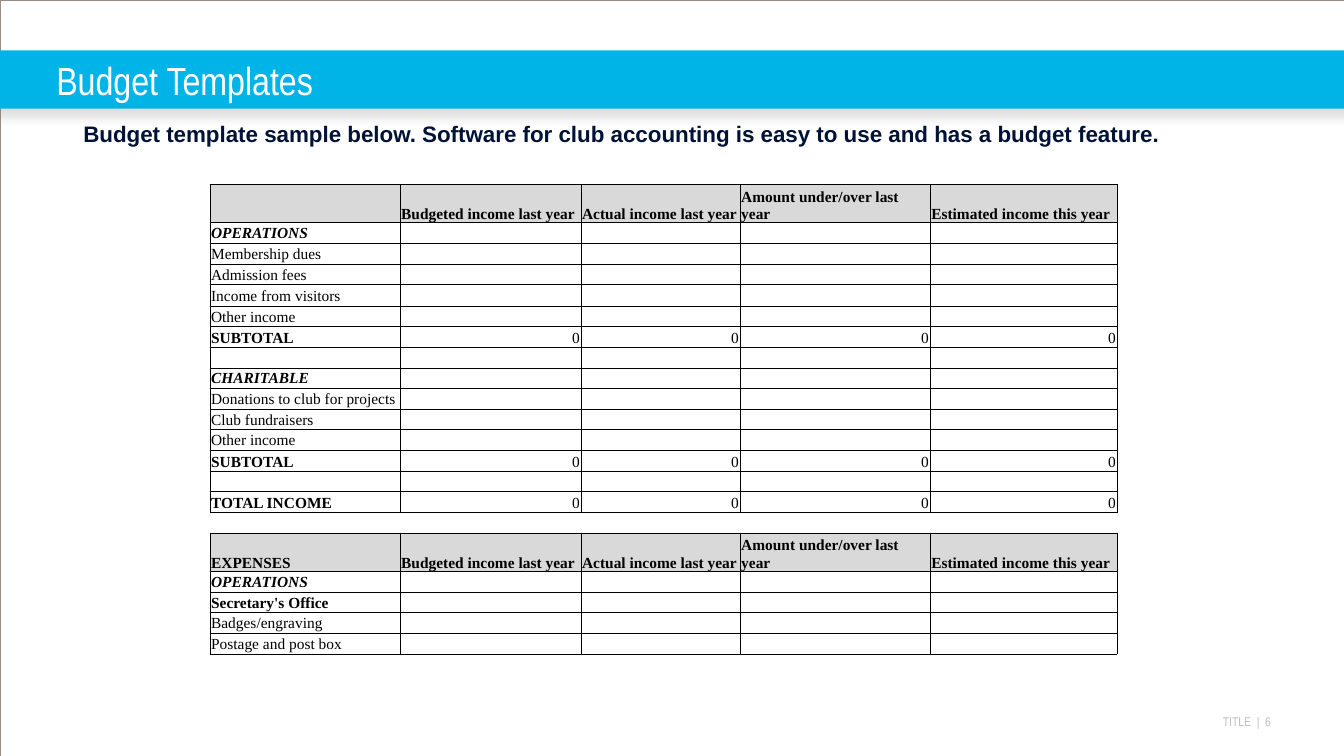
from lxml import etree
from pptx import Presentation
from pptx.dml.color import RGBColor
from pptx.enum.shapes import MSO_SHAPE
from pptx.enum.text import MSO_ANCHOR, PP_ALIGN
from pptx.oxml import parse_xml
from pptx.oxml.ns import qn
from pptx.util import Cm, Pt

RECT = MSO_SHAPE.RECTANGLE
TOP, MIDDLE, BOTTOM = MSO_ANCHOR.TOP, MSO_ANCHOR.MIDDLE, MSO_ANCHOR.BOTTOM
LEFT, RIGHT = PP_ALIGN.LEFT, PP_ALIGN.RIGHT
NS = 'xmlns:a="http://schemas.openxmlformats.org/drawingml/2006/main"'

WIDTH, HEIGHT = 33.87, 19.05
COLUMN_WIDTHS = [4.79, 4.56, 4.01, 4.79, 4.71]
HEADER_HEIGHT, ROW_HEIGHT, VISITORS_HEIGHT = 0.97, 0.52, 0.54
HEADINGS = ["Budgeted income last year", "Actual income last year",
            "Amount under/over last year", "Estimated income this year"]
ROWS = [
    ("header", ""),
    ("section", "OPERATIONS"),
    ("item", "Membership dues"),
    ("item", "Admission fees"),
    ("item", "Income from visitors"),
    ("item", "Other income"),
    ("total", "SUBTOTAL"),
    ("item", ""),
    ("section", "CHARITABLE"),
    ("item", "Donations to club for projects"),
    ("item", "Club fundraisers"),
    ("item", "Other income"),
    ("total", "SUBTOTAL"),
    ("item", ""),
    ("total", "TOTAL INCOME"),
    ("gap", ""),
    ("header", "EXPENSES"),
    ("section", "OPERATIONS"),
    ("group", "Secretary's Office"),
    ("item", "Badges/engraving"),
    ("item", "Postage and post box"),
]
ROW_VALUES = {"header": HEADINGS, "total": ["0"] * 4}


def color(value):
    """Turn a hex string into a colour."""
    return RGBColor.from_string(value)


def add_run(p, text, size, name, hex_color, bold=False, italic=False):
    """Add one formatted run to a paragraph."""
    r = p.add_run()
    r.text = text
    r.font.size = Pt(size)
    r.font.name = name
    r.font.bold = bold
    r.font.italic = italic
    r.font.color.rgb = color(hex_color)


def add_text(s, box, text, size, name, hex_color, bold=False,
             align=LEFT, anchor=TOP, inset=None):
    """Place a text box holding one line of text."""
    tf = s.shapes.add_textbox(*map(Cm, box)).text_frame
    tf.word_wrap = True
    tf.vertical_anchor = anchor
    if inset is not None:
        tf.margin_left = tf.margin_right = Cm(inset)
        tf.margin_top = tf.margin_bottom = Cm(inset)
    p = tf.paragraphs[0]
    p.alignment = align
    add_run(p, text, size, name, hex_color, bold)


def add_frame(s, box):
    """Outline the slide with a hairline."""
    sp = s.shapes.add_shape(RECT, *map(Cm, box))
    sp.shadow.inherit = False
    sp.fill.background()
    sp.line.color.rgb = color("958D85")
    sp.line.width = Pt(0.13)


def add_title_band(s, box, title):
    """Draw the shadowed band across the box with the title on it."""
    left, top, width, height = box
    sp = s.shapes.add_shape(RECT, Cm(left - 0.28), Cm(top),
                            Cm(width + 0.56), Cm(height))
    sp.shadow.inherit = False
    sp.fill.solid()
    sp.fill.fore_color.rgb = color("01B4E7")
    sp.line.fill.background()
    effects = sp._element.spPr.find(qn("a:effectLst"))
    effects.append(parse_xml(
        f'<a:outerShdw {NS} blurRad="{Pt(7)}" dist="{Pt(4.8)}" dir="5400000" '
        'algn="t" rotWithShape="0"><a:srgbClr val="808080">'
        '<a:alpha val="25000"/></a:srgbClr></a:outerShdw>'))
    add_text(s, (left + 1.42, top, width - 1.42, height), title, 28,
             "Arial Narrow", "FFFFFF", anchor=MIDDLE, inset=0)


def set_borders(cell, sides):
    """Draw thin black lines on the given sides and none on the others."""
    tc_pr = cell._tc.get_or_add_tcPr()
    for i, side in enumerate("LRTB"):
        fill = ('<a:solidFill><a:srgbClr val="000000"/></a:solidFill>'
                if side in sides else "<a:noFill/>")
        tc_pr.insert(i, parse_xml(
            f'<a:ln{side} {NS} w="{Pt(0.5)}">{fill}</a:ln{side}>'))


def fill_cell(cell, kind, text, is_label):
    """Write and style one budget cell according to its kind of row."""
    cell.margin_left = cell.margin_right = cell.margin_top = Cm(0.03)
    cell.margin_bottom = 0
    cell.vertical_anchor = BOTTOM if kind in ("header", "total") else MIDDLE
    if kind == "header":
        cell.fill.solid()
        cell.fill.fore_color.rgb = color("D9D9D9")
    else:
        cell.fill.background()
    set_borders(cell, "TB" if kind == "gap" else "LRTB")
    p = cell.text_frame.paragraphs[0]
    if text:
        p.alignment = RIGHT if kind == "total" and not is_label else LEFT
        bold = kind == "header" or (is_label and kind != "item")
        add_run(p, text, 11, "Times New Roman", "000000", bold, kind == "section")
    else:
        etree.SubElement(p._p, qn("a:endParaRPr"), sz="1100")


def add_budget_table(s, left, top):
    """Build the income and expense table from its top left corner."""
    heights = [HEADER_HEIGHT if kind == "header"
               else VISITORS_HEIGHT if label == "Income from visitors"
               else ROW_HEIGHT for kind, label in ROWS]
    table = s.shapes.add_table(len(ROWS), len(COLUMN_WIDTHS), Cm(left), Cm(top),
                               Cm(sum(COLUMN_WIDTHS)), Cm(sum(heights))).table
    table.first_row = table.horz_banding = False
    for column, width in zip(table.columns, COLUMN_WIDTHS):
        column.width = Cm(width)
    for i, (kind, label) in enumerate(ROWS):
        table.rows[i].height = Cm(heights[i])
        texts = [label] + ROW_VALUES.get(kind, [""] * 4)
        for j, text in enumerate(texts):
            fill_cell(table.cell(i, j), kind, text, j == 0)


def main():
    """Build the slide and save it."""
    prs = Presentation()
    prs.slide_width, prs.slide_height = Cm(WIDTH), Cm(HEIGHT)
    s = prs.slides.add_slide(prs.slide_layouts[6])
    add_text(s, (26.24, 17.98, 5.79, 0.38), "TITLE  |  6", 9, "Arial Narrow",
             "BCBDC0", align=RIGHT, inset=0)
    add_frame(s, (0, 0, WIDTH, HEIGHT))
    add_title_band(s, (0, 1.27, WIDTH, 1.47), "Budget Templates")
    add_budget_table(s, 5.29, 4.64)
    add_text(s, (1.85, 2.9, 29.18, 0.94),
             "Budget template sample below. Software for club accounting "
             "is easy to use and has a budget feature.",
             16, "Arial", "001236", bold=True)
    prs.save("out.pptx")


if __name__ == "__main__":
    main()
